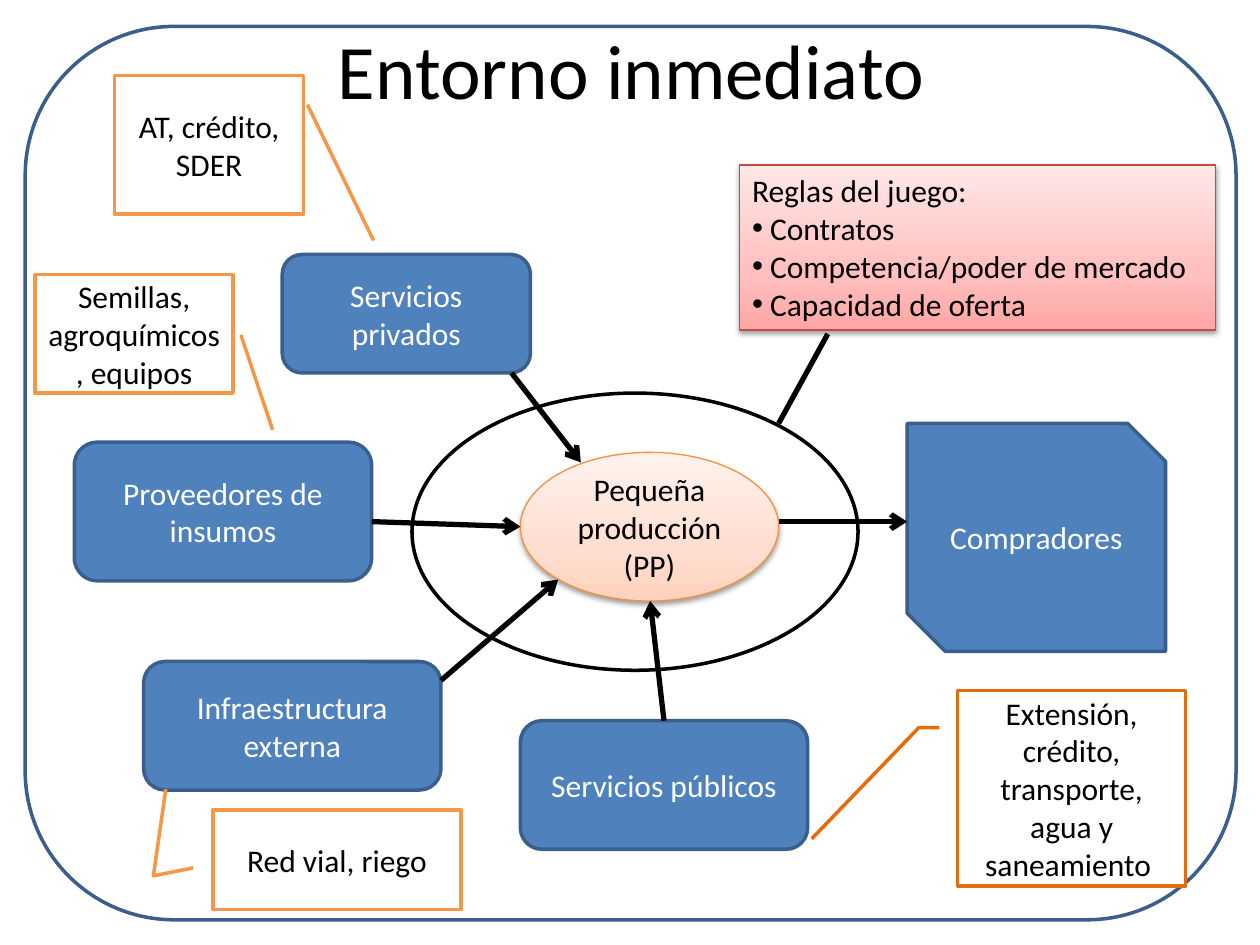
from lxml import etree
from pptx import Presentation
from pptx import util as u
from pptx.dml import color
from pptx.enum import shapes, text
from pptx.oxml import ns

KIND = shapes.MSO_SHAPE
FONT = "Calibri"
BLACK, WHITE = "000000", "FFFFFF"
BLUE, NAVY = "4F81BD", "3A5F8C"
ORANGE, DARK_ORANGE = "F79646", "E46C0A"


def rgb(value):
    return color.RGBColor.from_string(value)


def inches(values):
    return [u.Inches(value) for value in values]


def add_node(parent, tag, **attributes):
    node = etree.SubElement(parent, ns.qn(tag))
    for name, value in attributes.items():
        node.set(name, str(value))
    return node


def add_span(para, words, size=18, ink=BLACK):
    span = para.add_run()
    span.text = words
    span.font.name = FONT
    span.font.size = u.Pt(size)
    span.font.color.rgb = rgb(ink)


def add_box(page, kind, box, line, width=2, fill=None):
    shape = page.shapes.add_shape(kind, *inches(box))
    shape.shadow.inherit = False
    shape.line.color.rgb = rgb(line)
    shape.line.width = u.Pt(width)
    if fill:
        shape.fill.solid()
        shape.fill.fore_color.rgb = rgb(fill)
    else:
        shape.fill.background()
    return shape


def add_label(shape, words, ink=BLACK):
    frame = shape.text_frame
    frame.word_wrap = True
    frame.vertical_anchor = text.MSO_ANCHOR.MIDDLE
    para = frame.paragraphs[0]
    para.alignment = text.PP_ALIGN.CENTER
    add_span(para, words, ink=ink)


def add_glow(shape, colors):
    properties = shape.element.spPr
    gradient = etree.Element(ns.qn("a:gradFill"), rotWithShape="1")
    stops = add_node(gradient, "a:gsLst")
    for position, value in zip((0, 35000, 100000), colors):
        stop = add_node(stops, "a:gs", pos=position)
        add_node(stop, "a:srgbClr", val=value)
    add_node(gradient, "a:lin", ang=270 * 60000, scaled=1)
    plain = properties.find(ns.qn("a:noFill"))
    properties.replace(plain, gradient)

    effects = properties.find(ns.qn("a:effectLst"))
    shadow = add_node(effects, "a:outerShdw", blurRad=u.Pt(3.1), dist=u.Pt(1.6),
                      dir=90 * 60000, rotWithShape=0)
    tint = add_node(shadow, "a:srgbClr", val=BLACK)
    add_node(tint, "a:alpha", val=38000)


def add_title(page, box, words):
    title = page.shapes.title
    title.left, title.top, title.width, title.height = inches(box)
    title.text_frame.vertical_anchor = text.MSO_ANCHOR.MIDDLE
    para = title.text_frame.paragraphs[0]
    para.alignment = text.PP_ALIGN.CENTER
    add_span(para, words, size=44)


def add_producer(page, box, words):
    producer = add_box(page, KIND.OVAL, box, "F69240", 0.75)
    add_glow(producer, ("FFD2BD", "FFDED0", "FFF2ED"))
    add_label(producer, words)


def add_actor(page, box, words, kind=KIND.ROUNDED_RECTANGLE):
    actor = add_box(page, kind, box, NAVY, fill=BLUE)
    add_label(actor, words, WHITE)
    return actor


def add_link(page, start, end, arrow=True):
    link = page.shapes.add_connector(shapes.MSO_CONNECTOR.STRAIGHT,
                                     *inches(start + end))
    link.line.color.rgb = rgb(BLACK)
    link.line.width = u.Pt(3)
    if arrow:
        add_node(link.line._get_or_add_ln(), "a:tailEnd", type="arrow")
    add_node(link._element.spPr, "a:effectLst")
    return link


def add_rules(page, box, heading, items):
    rules = add_box(page, KIND.RECTANGLE, box, "BF4C48", 0.75)
    add_glow(rules, ("FFA6A5", "FFC0BF", "FFE7E7"))
    frame = rules.text_frame
    frame.word_wrap = True
    frame.vertical_anchor = text.MSO_ANCHOR.TOP
    frame.auto_size = text.MSO_AUTO_SIZE.SHAPE_TO_FIT_TEXT
    para = frame.paragraphs[0]
    para.alignment = text.PP_ALIGN.LEFT
    add_span(para, heading)
    for item in items:
        para = frame.add_paragraph()
        para.alignment = text.PP_ALIGN.LEFT
        bullet = para._p.get_or_add_pPr()
        add_node(bullet, "a:buFont", typeface="Arial")
        add_node(bullet, "a:buChar", char="•")
        add_span(para, " " + item)


def add_callout(page, box, words, bends, line=ORANGE):
    kind = KIND.LINE_CALLOUT_1 if len(bends) == 4 else KIND.LINE_CALLOUT_2
    callout = add_box(page, kind, box, line, fill=WHITE)
    for index, bend in enumerate(bends):
        callout.adjustments[index] = bend
    add_label(callout, words)


def main():
    deck = Presentation()
    deck.slide_width, deck.slide_height = inches((10, 7.5))
    page = deck.slides.add_slide(deck.slide_layouts[5])

    add_title(page, (0.51, 0, 9, 1.09), "Entorno inmediato")
    add_producer(page, (4.13, 3.59, 2.05, 1.18), "Pequeña producción (PP)")

    add_actor(page, (2.24, 2.02, 1.97, 0.94), "Servicios privados")
    add_actor(page, (0.59, 3.51, 2.36, 1.1), "Proveedores de insumos")
    add_actor(page, (1.14, 5.25, 2.36, 1.02), "Infraestructura externa")
    public = add_actor(page, (4.13, 5.72, 2.28, 1.02), "Servicios públicos")
    add_actor(page, (7.2, 3.36, 2.05, 1.81), "Compradores",
              KIND.SNIP_2_DIAG_RECTANGLE)

    add_link(page, (4.06, 2.96), (4.61, 3.67))
    add_link(page, (2.95, 4.14), (4.13, 4.18))
    add_link(page, (3.5, 5.4), (4.43, 4.6))
    add_link(page, (5.28, 5.72), (5.16, 4.77)).begin_connect(public, 0)
    add_link(page, (6.18, 4.14), (7.2, 4.14))

    add_box(page, KIND.OVAL, (3.27, 3.12, 3.54, 2.2), BLACK)
    add_link(page, (6.18, 3.36), (6.57, 2.65), arrow=False)
    add_rules(page, (5.87, 1.31, 3.78, 1.31), "Reglas del juego:",
              ("Contratos", "Competencia/poder de mercado",
               "Capacidad de oferta"))
    add_box(page, KIND.ROUNDED_RECTANGLE, (0.2, 0.21, 9.61, 7.09), NAVY)

    add_callout(page, (0.91, 0.6, 1.5, 1.1), "AT, crédito, SDER",
                (0.21, 1.02, 1.19, 1.37))
    add_callout(page, (7.6, 5.48, 1.81, 1.55),
                "Extensión, crédito, transporte, agua y saneamiento ",
                (0.19, -0.08, 0.19, -0.17, 0.76, -0.64), DARK_ORANGE)
    add_callout(page, (0.28, 2.18, 1.57, 0.94),
                "Semillas, agroquímicos, equipos",
                (0.51, 1.04, 1.31, 1.2))
    add_callout(page, (1.69, 6.43, 1.97, 0.79), "Red vial, riego",
                (0.58, -0.08, 0.66, -0.24, -0.21, -0.19))

    deck.save("out.pptx")


if __name__ == "__main__":
    main()
